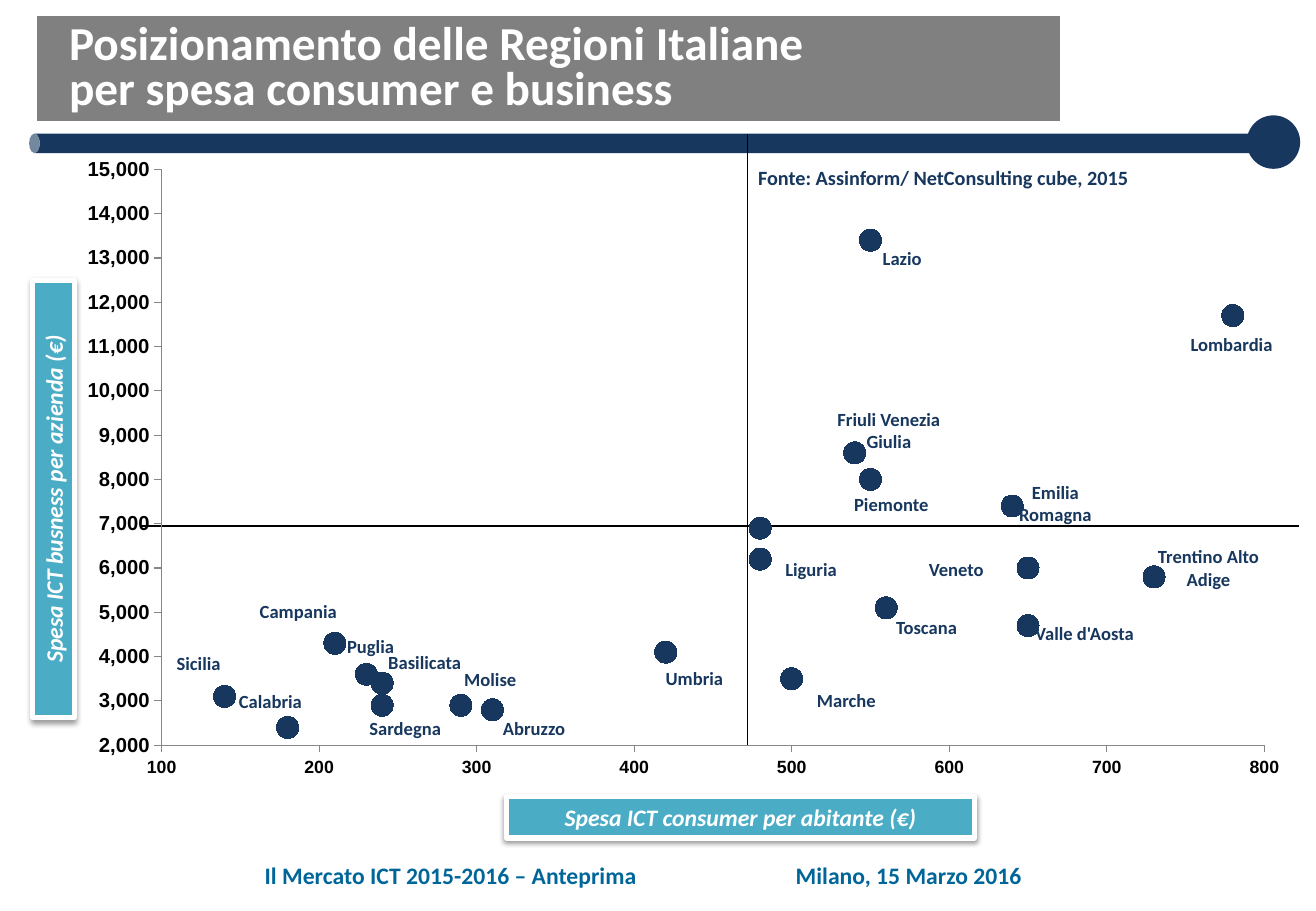
from lxml import etree
from pptx import Presentation
from pptx.chart.data import XyChartData
from pptx.dml.color import RGBColor
from pptx.enum.chart import XL_CHART_TYPE, XL_MARKER_STYLE, XL_TICK_LABEL_POSITION, XL_TICK_MARK
from pptx.enum.shapes import MSO_CONNECTOR, MSO_SHAPE
from pptx.enum.text import MSO_ANCHOR, PP_ALIGN
from pptx.oxml import parse_xml
from pptx.oxml.ns import nsdecls, qn
from pptx.util import Inches, Pt

COLORS = {name: RGBColor.from_string(value) for name, value in {
    "navy": "17375E", "gray": "808080", "teal": "4BACC6", "footer": "006699",
    "white": "FFFFFF", "black": "000000", "axis": "868686"}.items()}

presentation = Presentation()
presentation.slide_width = Inches(10.83)
presentation.slide_height = Inches(7.5)
slide = presentation.slides.add_slide(presentation.slide_layouts[6])


def add_shape(kind, left, top, width, height, fill):
    shape = slide.shapes.add_shape(
        kind, Inches(left), Inches(top), Inches(width), Inches(height))
    shape.shadow.inherit = False
    shape.fill.solid()
    shape.fill.fore_color.rgb = COLORS[fill]
    shape.line.fill.background()
    return shape


def add_text(text, left, top, width, height, size, color, align=PP_ALIGN.LEFT):
    """Add a bold, wrapping text box and return it."""
    box = slide.shapes.add_textbox(
        Inches(left), Inches(top), Inches(width), Inches(height))
    box.text_frame.word_wrap = True
    box.text_frame.text = text
    paragraph = box.text_frame.paragraphs[0]
    paragraph.alignment = align
    paragraph.font.name = "Calibri"
    paragraph.font.size = Pt(size)
    paragraph.font.bold = True
    paragraph.font.color.rgb = COLORS[color]
    return box


# Header
bar = add_shape(MSO_SHAPE.CAN, 5.21, -3.87, 0.16, 10.1, "navy")
bar.rotation = 270
bar.adjustments[0] = 0.55
title_band = add_shape(MSO_SHAPE.RECTANGLE, 0.3, 0.13, 8.43, 0.87, "gray")
title_band.line.color.rgb = COLORS["white"]
title_band.line.width = Pt(0.75)
add_shape(MSO_SHAPE.OVAL, 10.26, 0.95, 0.44, 0.44, "navy")
title = add_text("Posizionamento delle Regioni Italiane\vper spesa consumer e business",
                 0.47, 0.15, 10.62, 1, 28, "white")
title.text_frame.paragraphs[0].line_spacing = 0.8

# Footer
footer = add_text("", 2.08, 7.04, 6.55, 0.34, 14, "footer")
paragraph = footer.text_frame.paragraphs[0]
tabs = etree.SubElement(paragraph._p.get_or_add_pPr(), qn("a:tabLst"))
paragraph._p.pPr.insert(0, tabs)
etree.SubElement(tabs, qn("a:tab"), pos=str(Inches(4.37)), algn="l")
paragraph.add_run().text = "Il Mercato ICT 2015-2016 – Anteprima\tMilano, 15 Marzo 2016"

# Average lines
for x1, y1, x2, y2 in [(1.17, 4.33, 10.69, 4.33), (6.15, 6.14, 6.15, 1.1)]:
    line = slide.shapes.add_connector(
        MSO_CONNECTOR.STRAIGHT, Inches(x1), Inches(y1), Inches(x2), Inches(y2))
    line.line.color.rgb = COLORS["black"]
    line.line.width = Pt(0.75)
    etree.SubElement(line._element.spPr, qn("a:effectLst"))

# Scatter chart: consumer spending per inhabitant, business spending per company
points = [
    (550, 8000), (650, 4700), (780, 11700), (480, 6200), (730, 5800), (650, 6000),
    (540, 8600), (640, 7400), (560, 5100), (420, 4100), (500, 3500), (550, 13400),
    (310, 2800), (290, 2900), (210, 4300), (230, 3600), (240, 3400), (180, 2400),
    (140, 3100), (240, 2900), (480, 6900)]
chart_data = XyChartData()
spending = chart_data.add_series("Series 1")
for consumer, business in points:
    spending.add_data_point(consumer, business)
chart = slide.shapes.add_chart(
    XL_CHART_TYPE.XY_SCATTER, Inches(0.61), Inches(1.3), Inches(10.14), Inches(5.28),
    chart_data).chart
chart.has_legend = False
chart.has_title = False
chart.font.name = "Arial"
chart.font.size = Pt(18)
chart.font.color.rgb = COLORS["black"]
plot = chart.plots[0]
plot.vary_by_categories = False
series = plot.series[0]
series.smooth = False
series.format.line.fill.background()
series.marker.style = XL_MARKER_STYLE.CIRCLE
series.marker.size = 13
series.marker.format.fill.solid()
series.marker.format.fill.fore_color.rgb = COLORS["navy"]
series.marker.format.line.color.rgb = COLORS["navy"]

for axis, low, high, step, size in [(chart.category_axis, 100, 800, 100, 10.5),
                                    (chart.value_axis, 2000, 15000, 1000, 12)]:
    axis.minimum_scale = low
    axis.maximum_scale = high
    axis.major_unit = step
    axis.has_major_gridlines = False
    axis.major_tick_mark = XL_TICK_MARK.OUTSIDE
    axis.minor_tick_mark = XL_TICK_MARK.NONE
    axis.tick_label_position = XL_TICK_LABEL_POSITION.LOW
    axis.tick_labels.number_format = "#,##0"
    axis.tick_labels.number_format_is_linked = False
    axis.tick_labels.font.size = Pt(size)
    axis.tick_labels.font.bold = True
    axis.format.line.color.rgb = COLORS["axis"]
    axis.format.line.width = Pt(0.75)

plot_area = chart._chartSpace.chart.plotArea
for old_layout in plot_area.findall(qn("c:layout")):
    plot_area.remove(old_layout)
plot_area.insert(0, parse_xml(
    f'<c:layout {nsdecls("c")}><c:manualLayout><c:layoutTarget val="inner"/>'
    '<c:xMode val="edge"/><c:yMode val="edge"/><c:x val="0.071"/><c:y val="0.018"/>'
    '<c:w val="0.895"/><c:h val="0.898"/></c:manualLayout></c:layout>'))

# Axis captions
for text, left, top, width, rotation in [
        ("Spesa ICT consumer per abitante (€)", 4.17, 6.56, 3.85, 0),
        ("Spesa ICT busness per azienda (€)", -1.36, 3.94, 3.6, 270)]:
    caption = add_shape(MSO_SHAPE.RECTANGLE, left, top, width, 0.34, "teal")
    caption.rotation = rotation
    caption.line.color.rgb = COLORS["white"]
    caption.line.width = Pt(3)
    effects = caption._element.spPr.find(qn("a:effectLst"))
    effects.append(parse_xml(
        f'<a:outerShdw {nsdecls("a")} blurRad="{Pt(3.1)}" dist="{Pt(1.6)}" dir="5400000" '
        'rotWithShape="0"><a:srgbClr val="000000"><a:alpha val="38000"/></a:srgbClr>'
        '</a:outerShdw>'))
    caption.text_frame.text = text
    caption.text_frame.vertical_anchor = MSO_ANCHOR.MIDDLE
    paragraph = caption.text_frame.paragraphs[0]
    paragraph.alignment = PP_ALIGN.CENTER
    paragraph.font.name = "Calibri"
    paragraph.font.size = Pt(14)
    paragraph.font.bold = True
    paragraph.font.italic = True
    paragraph.font.color.rgb = COLORS["white"]

# Region labels: name, left, top, width, number of lines
regions = [
    ("Lombardia", 9.54, 2.69, 1.19, 1), ("Lazio", 6.83, 1.98, 1.19, 1),
    ("Friuli Venezia Giulia", 6.77, 3.31, 1.09, 2), ("Piemonte", 6.74, 4.01, 1.19, 1),
    ("Emilia Romagna", 8.09, 3.91, 1.19, 2), ("Trentino Alto Adige", 9.35, 4.44, 1.19, 2),
    ("Veneto", 7.45, 4.54, 0.84, 1), ("Valle d'Aosta", 8.33, 5.07, 1.19, 1),
    ("Toscana", 7.03, 5.02, 1.19, 1), ("Marche", 6.37, 5.62, 1.19, 1),
    ("Liguria", 6.24, 4.54, 0.87, 1), ("Umbria", 5.28, 5.44, 0.87, 1),
    ("Basilicata", 2.97, 5.31, 1.05, 1), ("Puglia", 2.6, 5.18, 0.9, 1),
    ("Campania", 1.93, 4.89, 1.05, 1), ("Sardegna", 2.81, 5.85, 1.05, 1),
    ("Sicilia", 1.11, 5.32, 1.05, 1), ("Abruzzo", 3.87, 5.85, 1.05, 1),
    ("Molise", 3.51, 5.45, 1.05, 1), ("Calabria", 1.7, 5.63, 1.05, 1)]
for name, left, top, width, lines in regions:
    add_text(name, left, top, width, 0.11 + 0.18 * lines, 11, "navy", PP_ALIGN.CENTER)

add_text("Fonte: Assinform/ NetConsulting cube, 2015", 6.14, 1.31, 3.29, 0.3, 12, "navy")

presentation.save("out.pptx")
